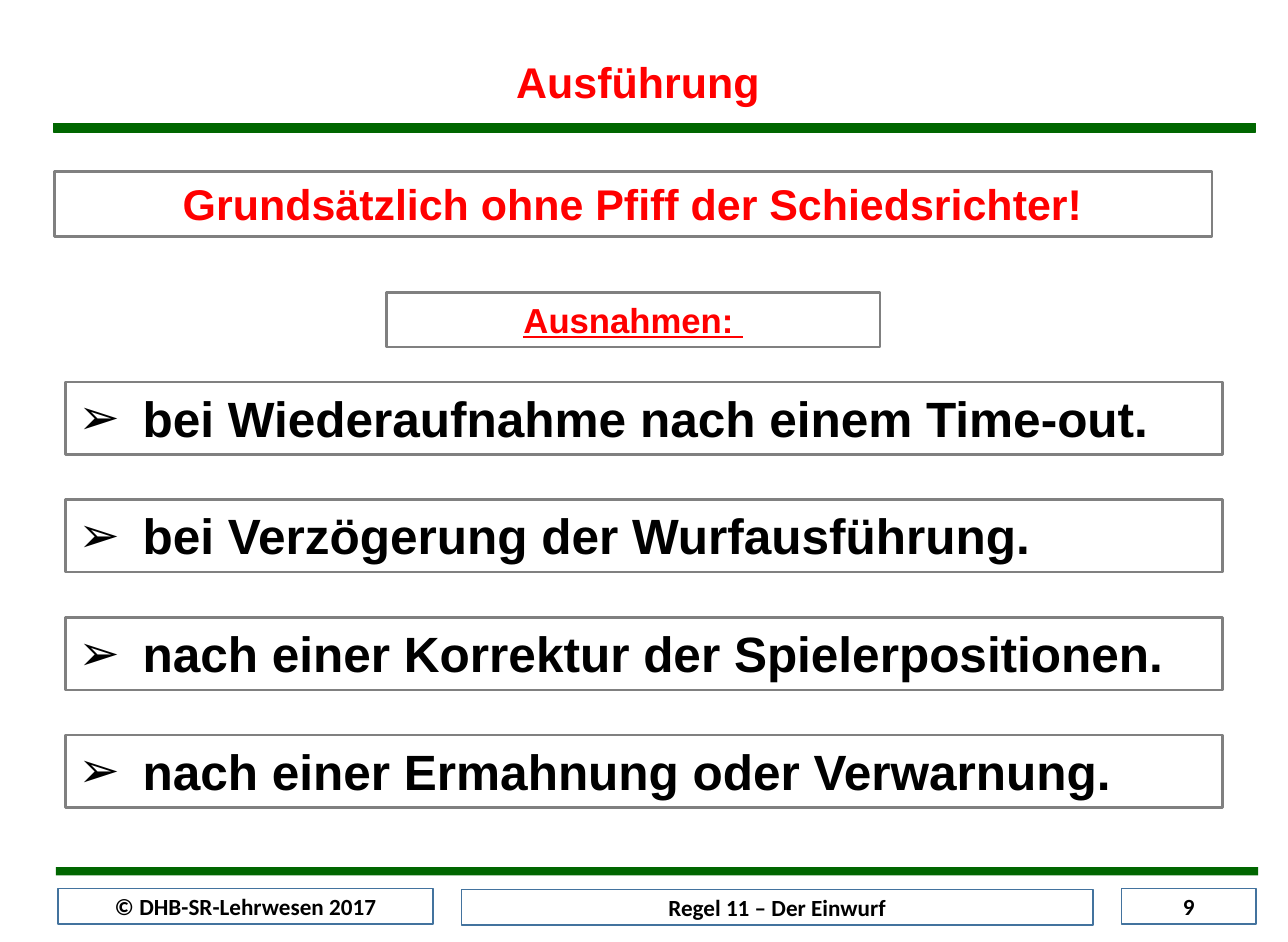
"""Build the handball rules slide on carrying out the throw-in."""
from lxml.etree import SubElement
from pptx import Presentation
from pptx.dml.color import RGBColor
from pptx.enum.shapes import MSO_SHAPE
from pptx.enum.text import MSO_ANCHOR, PP_ALIGN
from pptx.oxml.ns import qn
from pptx.util import Inches, Pt

GREEN, GREY, BLUE = "006600", "808080", "43739E"
RED, BLACK, WHITE = "FF0000", "000000", "FFFFFF"


def add_box(area, fill=None, outline=None, weight=1.5):
    """Add a rectangle at (left, top, width, height) in inches."""
    box = slide.shapes.add_shape(MSO_SHAPE.RECTANGLE, *map(Inches, area))
    box.shadow.inherit = False
    for paint, colour in ((box.fill, fill), (box.line.fill, outline)):
        if colour:
            paint.solid()
            paint.fore_color.rgb = RGBColor.from_string(colour)
        else:
            paint.background()
    if outline:
        box.line.width = Pt(weight)
    return box


def write(box, text, size, colour, font="Arial", anchor=MSO_ANCHOR.TOP, bullet=None):
    """Fill a box with one bold paragraph, centred unless it has a bullet."""
    frame = box.text_frame
    frame.word_wrap = True
    frame.vertical_anchor = anchor
    frame.margin_left = frame.margin_right = Inches(0.11)
    frame.margin_top = frame.margin_bottom = Inches(0.05)
    frame.text = text
    paragraph = frame.paragraphs[0]
    paragraph.alignment = PP_ALIGN.LEFT if bullet else PP_ALIGN.CENTER
    if bullet:
        properties = paragraph._p.get_or_add_pPr()
        properties.set("marL", str(Inches(0.54)))
        properties.set("indent", str(-Inches(0.54)))
        SubElement(properties, qn("a:buFont")).set("typeface", "Arial")
        SubElement(properties, qn("a:buChar")).set("char", bullet)
    run = paragraph.runs[0]
    run.font.name, run.font.size, run.font.bold = font, Pt(size), True
    run.font.color.rgb = RGBColor.from_string(colour)
    return run


presentation = Presentation()
presentation.slide_width, presentation.slide_height = Inches(10.83), Inches(7.92)
slide = presentation.slides.add_slide(presentation.slide_layouts[6])

add_box((0.45, 1.04, 10.11, 0.07), GREEN, GREEN, 0.75)
add_box((0.47, 7.29, 10.11, 0.07), GREEN)

footer = [
    ("© DHB-SR-Lehrwesen 2017", 0.49, 7.47, 3.15),
    ("Regel 11 – Der Einwurf", 3.88, 7.48, 5.31),
    ("9", 9.43, 7.47, 1.13),
]
for label, left, top, width in footer:
    footer_box = add_box((left, top, width, 0.3), WHITE, BLUE, 1)
    write(footer_box, label, 14, BLACK, "Calibri", MSO_ANCHOR.MIDDLE)

title = add_box((3.29, 0.42, 4.15, 0.55), outline=WHITE)
write(title, "Ausführung", 26, RED)

principle = add_box((0.46, 1.44, 9.73, 0.55), outline=GREY)
write(principle, "Grundsätzlich ohne Pfiff der Schiedsrichter!", 26, RED)

exceptions_heading = add_box((3.25, 2.46, 4.15, 0.46), outline=GREY)
write(exceptions_heading, "Ausnahmen: ", 21, RED).font.underline = True

exceptions = [
    "bei Wiederaufnahme nach einem Time-out.",
    "bei Verzögerung der Wurfausführung.",
    "nach einer Korrektur der Spielerpositionen.",
    "nach einer Ermahnung oder Verwarnung.",
]
for row, exception in enumerate(exceptions):
    exception_box = add_box((0.55, 3.21 + row * 0.99, 9.73, 0.61), outline=GREY)
    write(exception_box, exception, 30, BLACK, bullet="➢")

presentation.save("out.pptx")
